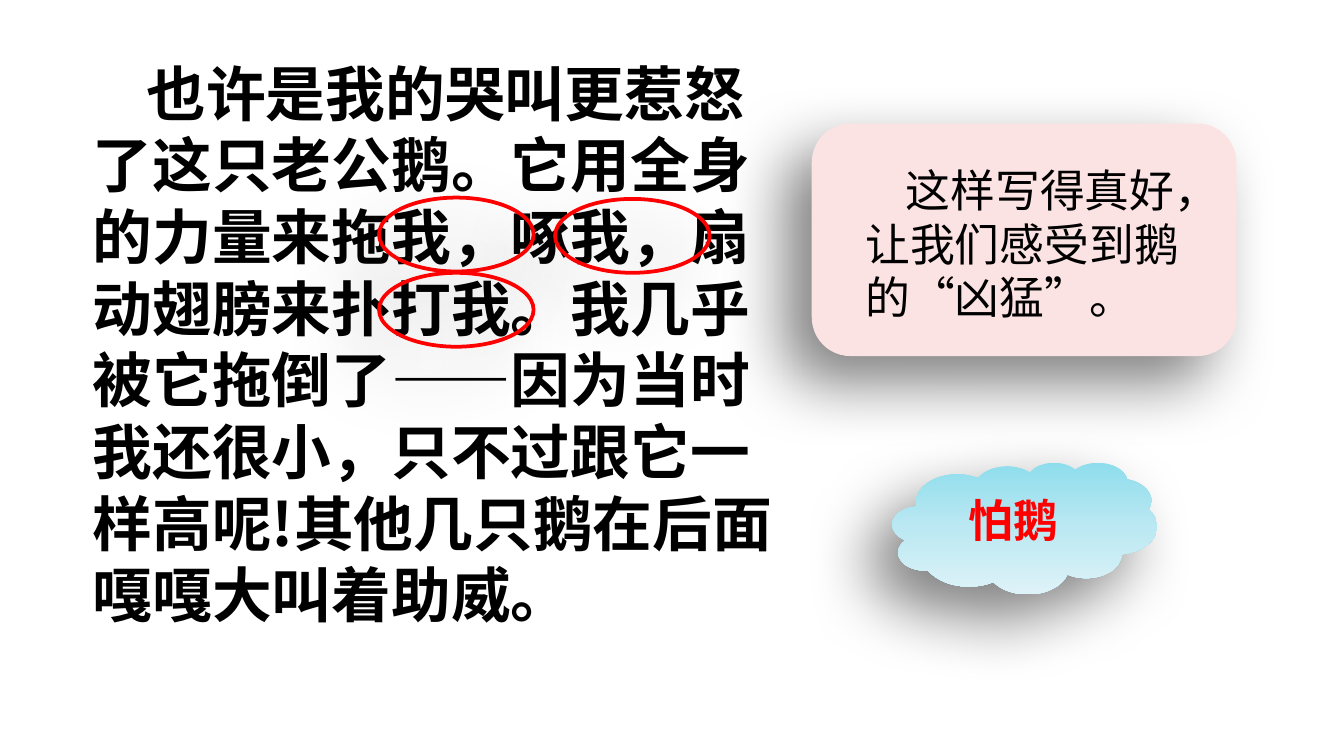
from dataclasses import dataclass

from lxml import etree
from pptx import Presentation
from pptx import util as u
from pptx.dml import color
from pptx.enum import shapes, text
from pptx.oxml import ns

FONT = "Noto Sans CJK SC"
LINE_HEIGHT = 1.2
SLIDE_WIDTH = u.Inches(10)
SLIDE_HEIGHT = SLIDE_WIDTH * 9 // 16


@dataclass(frozen=True)
class Box:
    left: float
    top: float
    width: float
    height: float

    def lengths(self) -> list:
        return [u.Inches(value) for value in (self.left, self.top, self.width, self.height)]


@dataclass(frozen=True)
class Passage:
    box: Box
    words: str
    size: int
    ink: str = "000000"
    bold: bool = False
    indent: float = 0
    wrap: bool = True


@dataclass(frozen=True)
class Figure:
    kind: shapes.MSO_SHAPE
    box: Box
    fills: tuple = ()
    outline: str = ""


def rgb(value: str) -> color.RGBColor:
    return color.RGBColor.from_string(value)


def add_child(parent, tag: str, **attributes):
    return etree.SubElement(parent, ns.qn(tag), **attributes)


def add_shadow(shape) -> None:
    shape.shadow.inherit = False
    effects = shape._element.spPr.find(ns.qn("a:effectLst"))
    shadow = add_child(effects, "a:outerShdw", blurRad=str(u.Pt(35)), dist=str(u.Pt(20)),
                       dir=str(135 * 60000), algn="tr", rotWithShape="0")
    ink = add_child(shadow, "a:srgbClr", val="000000")
    add_child(ink, "a:alpha", val="50000")


def fill_gradient(shape, colours: tuple) -> None:
    shape.fill.gradient()
    shape.fill.gradient_angle = 270
    stops = shape._element.spPr.find(ns.qn("a:gradFill")).find(ns.qn("a:gsLst"))
    for stop in list(stops):
        stops.remove(stop)
    for index, value in enumerate(colours):
        position = 100000 * index // (len(colours) - 1)
        stop = add_child(stops, "a:gs", pos=str(position))
        add_child(stop, "a:srgbClr", val=value)


def draw_figure(slide, figure: Figure) -> None:
    shape = slide.shapes.add_shape(figure.kind, *figure.box.lengths())
    if len(figure.fills) > 1:
        fill_gradient(shape, figure.fills)
    elif figure.fills:
        shape.fill.solid()
        shape.fill.fore_color.rgb = rgb(figure.fills[0])
    else:
        shape.fill.background()
    if figure.outline:
        shape.line.color.rgb = rgb(figure.outline)
        shape.line.width = u.Pt(2)
    else:
        shape.line.fill.background()
    add_shadow(shape)


def draw_passage(slide, passage: Passage) -> None:
    frame = slide.shapes.add_textbox(*passage.box.lengths()).text_frame
    frame.word_wrap = passage.wrap
    frame.auto_size = text.MSO_AUTO_SIZE.NONE
    paragraph = frame.paragraphs[0]
    paragraph.line_spacing = u.Pt(passage.size * LINE_HEIGHT)
    paragraph._p.get_or_add_pPr().set("indent", str(u.Inches(passage.indent)))
    run = paragraph.add_run()
    run.text = passage.words
    formats = {"name": FONT, "size": u.Pt(passage.size), "bold": passage.bold}
    for name, value in formats.items():
        setattr(run.font, name, value)
    run.font.color.rgb = rgb(passage.ink)
    add_child(run._r.get_or_add_rPr(), "a:ea", typeface=FONT)


STORY = Passage(
    Box(0.59, 0.37, 5.28, 4.41),
    "也许是我的哭叫更惹怒了这只老公鹅。它用全身的力量来拖我，啄我，扇动翅膀来扑打我。"
    "我几乎被它拖倒了——因为当时我还很小，只不过跟它一样高呢!其他几只鹅在后面嘎嘎大叫着助威。",
    32, bold=True, indent=0.4)
COMMENT = Passage(Box(6.34, 1.16, 2.64, 1.31),
                  "这样写得真好，让我们感受到鹅的“凶猛”。", 24, indent=0.3)
FEELING = Passage(Box(7.11, 3.62, 0.88, 0.5), "怕鹅", 24, "FF0000", True, wrap=False)

RINGS = [Figure(shapes.MSO_SHAPE.OVAL, Box(left, top, 1.15, 0.55), outline="FF0000")
         for left, top in ((2.82, 1.47), (4.13, 1.48), (2.82, 2.03))]
CARD = Figure(shapes.MSO_SHAPE.ROUNDED_RECTANGLE, Box(6.04, 0.92, 3.16, 1.73), ("FCE3E3",))
CLOUD = Figure(shapes.MSO_SHAPE.CLOUD, Box(6.64, 3.44, 1.97, 0.98),
               ("8EDDED", "BBE8F2", "DEF3F8"))


def main() -> None:
    presentation = Presentation()
    presentation.slide_width = SLIDE_WIDTH
    presentation.slide_height = SLIDE_HEIGHT
    slide = presentation.slides.add_slide(presentation.slide_layouts[6])
    for item in (STORY, *RINGS, CARD, COMMENT, CLOUD, FEELING):
        if isinstance(item, Figure):
            draw_figure(slide, item)
        else:
            draw_passage(slide, item)
    presentation.save("out.pptx")


if __name__ == "__main__":
    main()
